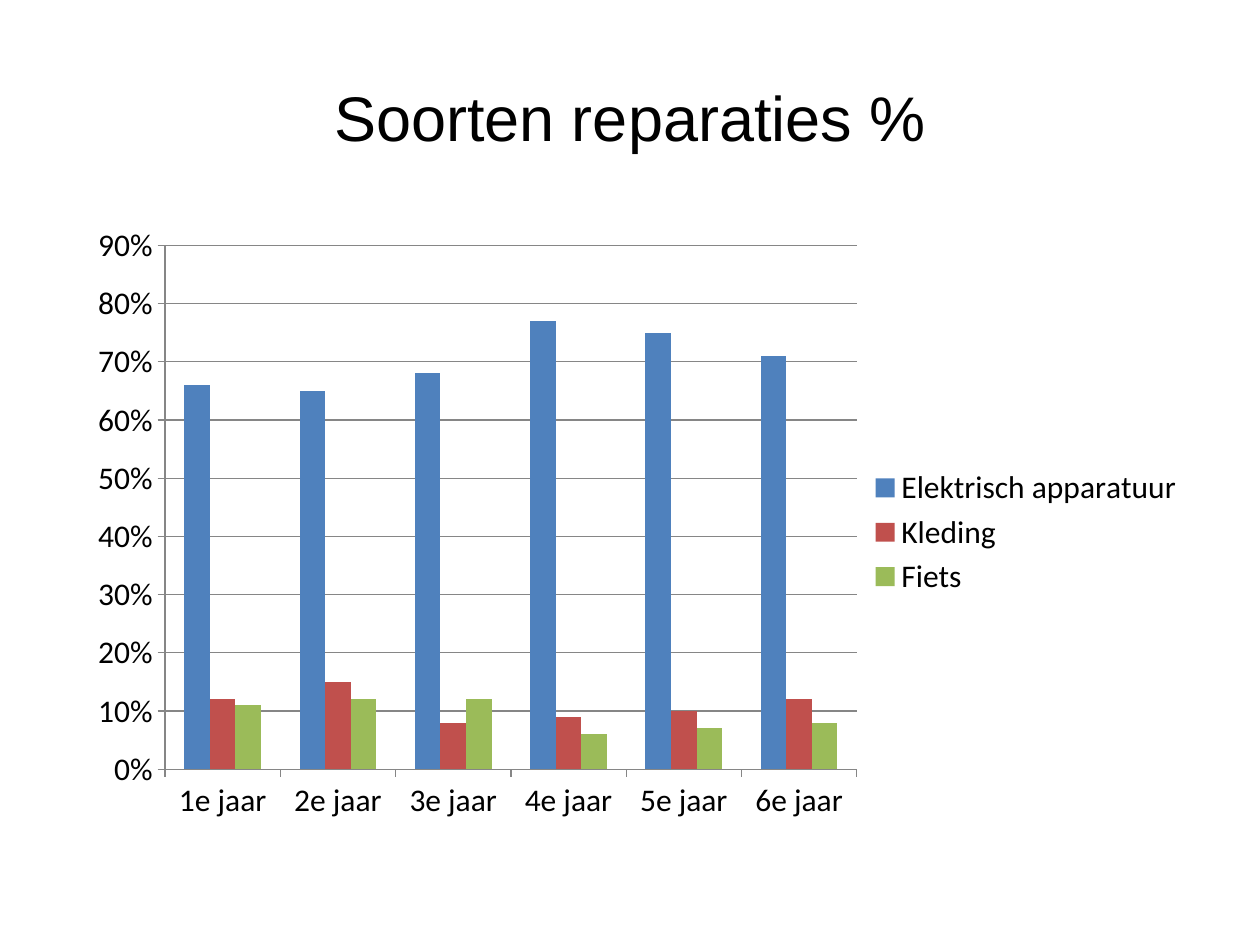
"""Build a slide with a clustered column chart of repair types per year."""
from lxml.etree import SubElement
from pptx import Presentation
from pptx.chart.data import CategoryChartData
from pptx.dml.color import RGBColor
from pptx.enum.chart import XL_CHART_TYPE, XL_LEGEND_POSITION, XL_TICK_MARK
from pptx.enum.text import MSO_ANCHOR, PP_ALIGN
from pptx.oxml.ns import qn
from pptx.util import Inches, Pt

BLACK = RGBColor(0x00, 0x00, 0x00)
GRAY = RGBColor(0x86, 0x86, 0x86)
BLUE = RGBColor(0x4F, 0x81, 0xBD)
RED = RGBColor(0xC0, 0x50, 0x4D)
GREEN = RGBColor(0x9B, 0xBB, 0x59)

TITLE = "Soorten reparaties %"
YEARS = [f"{year}e jaar" for year in range(1, 7)]
REPAIRS = [
    ("Elektrisch apparatuur", BLUE, (0.66, 0.65, 0.68, 0.77, 0.75, 0.71)),
    ("Kleding", RED, (0.12, 0.15, 0.08, 0.09, 0.1, 0.12)),
    ("Fiets", GREEN, (0.11, 0.12, 0.12, 0.06, 0.07, 0.08)),
]
PLOT_LAYOUT = [
    ("layoutTarget", "inner"), ("xMode", "edge"), ("yMode", "edge"),
    ("x", 0.09), ("y", 0.04), ("w", 0.61), ("h", 0.84),
]


def style_font(font, name, size):
    font.name = name
    font.size = Pt(size)
    font.color.rgb = BLACK


def style_line(line):
    line.color.rgb = GRAY
    line.width = Pt(0.75)


def add_title(page):
    box = page.shapes.add_textbox(Inches(0.5), Inches(0.3), Inches(9), Inches(1.25))
    frame = box.text_frame
    frame.word_wrap = True
    frame.vertical_anchor = MSO_ANCHOR.MIDDLE
    para = frame.paragraphs[0]
    para.alignment = PP_ALIGN.CENTER
    span = para.add_run()
    span.text = TITLE
    style_font(span.font, "Arial", 36)


def place_plot(chart):
    plot_area = chart._chartSpace.chart.plotArea
    for old_layout in plot_area.findall(qn("c:layout")):
        plot_area.remove(old_layout)
    layout = SubElement(plot_area, qn("c:layout"))
    plot_area.insert(0, layout)
    manual = SubElement(layout, qn("c:manualLayout"))
    for tag, value in PLOT_LAYOUT:
        SubElement(manual, qn(f"c:{tag}")).set("val", str(value))


def add_repairs_chart(page):
    data = CategoryChartData(number_format="0%")
    data.categories = YEARS
    for name, _, values in REPAIRS:
        data.add_series(name, values)
    chart = page.shapes.add_chart(
        XL_CHART_TYPE.COLUMN_CLUSTERED,
        Inches(0.5), Inches(1.75), Inches(9), Inches(4.95), data,
    ).chart
    chart.has_title = False
    style_font(chart.font, "Calibri", 18)
    chart.has_legend = True
    chart.legend.position = XL_LEGEND_POSITION.RIGHT
    chart.legend.include_in_layout = False

    plot = chart.plots[0]
    plot.gap_width = 150
    plot.vary_by_categories = False
    for series, (_, color, _) in zip(plot.series, REPAIRS):
        series.format.fill.solid()
        series.format.fill.fore_color.rgb = color

    for axis in (chart.category_axis, chart.value_axis):
        axis.major_tick_mark = XL_TICK_MARK.OUTSIDE
        axis.minor_tick_mark = XL_TICK_MARK.NONE
        style_line(axis.format.line)
    value_axis = chart.value_axis
    value_axis.minimum_scale = 0
    value_axis.maximum_scale = 0.9
    value_axis.major_unit = 0.1
    value_axis.has_major_gridlines = True
    style_line(value_axis.major_gridlines.format.line)
    value_axis.tick_labels.number_format = "0%"
    value_axis.tick_labels.number_format_is_linked = False
    place_plot(chart)


def main():
    deck = Presentation()
    deck.slide_width = Inches(10)
    deck.slide_height = Inches(7.5)
    page = deck.slides.add_slide(deck.slide_layouts[6])
    add_title(page)
    add_repairs_chart(page)
    deck.save("out.pptx")


if __name__ == "__main__":
    main()
